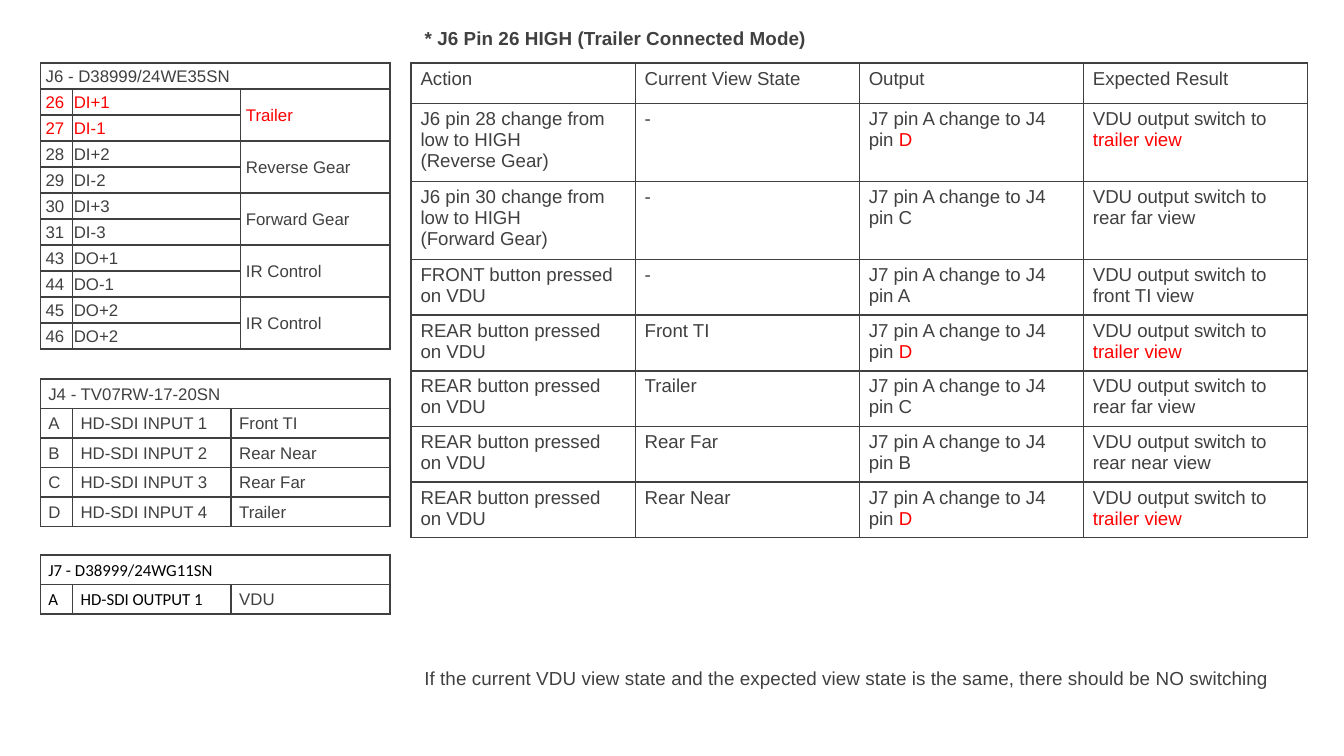
from dataclasses import dataclass

from lxml import etree
from pptx import Presentation
from pptx.dml.color import RGBColor as RGB
from pptx.enum.text import MSO_ANCHOR as Anchor, MSO_AUTO_SIZE as AutoSize, PP_ALIGN as Align
from pptx.oxml.ns import qn
from pptx.util import Inches, Pt

COLORS = {"text": "404040", "accent": "FF0000", "black": "000000", "border": "404040"}
RED = "|"


@dataclass
class Column:
    width: float
    pad: float
    font: str = "Arial"
    color: str = "text"


@dataclass
class Grid:
    left: float
    top: float
    columns: list[Column]
    heights: list[float]
    rows: list[list[str]]
    merges: list[tuple[int, int, int, int]]
    size: float = 9
    spacing: float = 1.07
    pad_y: float = 0
    anchor: Anchor = Anchor.MIDDLE


def write(tf, text: str, *, size: float, font: str = "Arial", color: str = "text",
          bold: bool = False, spacing: float = 1) -> None:
    for i, line in enumerate(text.split("\n")):
        p = tf.add_paragraph() if i else tf.paragraphs[0]
        p.alignment = Align.LEFT
        p.line_spacing = spacing
        p.space_before = Pt(0)
        for j, part in enumerate(line.split(RED)):
            if not part:
                continue
            r = p.add_run()
            r.text = part
            r.font.size = Pt(size)
            r.font.name = font
            r.font.bold = bold
            r.font.color.rgb = RGB.from_string(COLORS["accent" if j % 2 else color])


def add_borders(cell) -> None:
    tc_pr = cell._tc.get_or_add_tcPr()
    for i, side in enumerate(("lnL", "lnR", "lnT", "lnB")):
        ln = etree.Element(qn(f"a:{side}"), w=str(Pt(1)))
        fill = etree.SubElement(ln, qn("a:solidFill"))
        etree.SubElement(fill, qn("a:srgbClr"), val=COLORS["border"])
        tc_pr.insert(i, ln)


def draw_grid(slide, grid: Grid) -> None:
    width = sum(col.width for col in grid.columns)
    table = slide.shapes.add_table(
        len(grid.rows), len(grid.columns), Inches(grid.left), Inches(grid.top),
        Inches(width), Inches(sum(grid.heights))).table
    table.first_row = table.horz_banding = False
    for i, col in enumerate(grid.columns):
        table.columns[i].width = Inches(col.width)
    for i, (height, row) in enumerate(zip(grid.heights, grid.rows)):
        table.rows[i].height = Inches(height)
        for j, (col, text) in enumerate(zip(grid.columns, row)):
            cell = table.cell(i, j)
            cell.margin_left = cell.margin_right = Inches(col.pad)
            cell.margin_top = cell.margin_bottom = Inches(grid.pad_y)
            cell.vertical_anchor = grid.anchor
            cell.fill.background()
            add_borders(cell)
            write(cell.text_frame, text, size=grid.size, font=col.font,
                  color=col.color, spacing=grid.spacing)
    for top, left, bottom, right in grid.merges:
        table.cell(top, left).merge(table.cell(bottom, right))


def place_text(sp, top: float, text: str, bold: bool = False) -> None:
    sp.left, sp.top = Inches(3.06), Inches(top)
    sp.width, sp.height = Inches(6.67), Inches(0.27)
    tf = sp.text_frame
    tf.word_wrap = True
    tf.auto_size = AutoSize.SHAPE_TO_FIT_TEXT
    tf.vertical_anchor = Anchor.TOP
    write(tf, text, size=10.15, bold=bold)


def connector_grids() -> list[Grid]:
    signals = [
        ("Trailer", "DI", 1, 26), ("Reverse Gear", "DI", 2, 28), ("Forward Gear", "DI", 3, 30),
        ("IR Control", "DO", 1, 43), ("IR Control", "DO", 2, 45),
    ]
    j6_rows = [["J6 - D38999/24WE35SN", "", ""]]
    for label, kind, number, pin in signals:
        mark = RED if label == "Trailer" else ""
        second_sign = "+" if (kind, number) == ("DO", 2) else "-"
        j6_rows += [
            [f"{mark}{pin}", f"{mark}{kind}+{number}", f"{mark}{label}"],
            [f"{mark}{pin + 1}", f"{mark}{kind}{second_sign}{number}", ""],
        ]
    header = (0, 0, 0, 2)
    views = ["Front TI", "Rear Near", "Rear Far", "Trailer"]
    j4_rows = [["J4 - TV07RW-17-20SN", "", ""]] + [
        [letter, f"HD-SDI INPUT {n}", view]
        for n, (letter, view) in enumerate(zip("ABCD", views), 1)]
    j7_rows = [["J7 - D38999/24WG11SN", "", ""], ["A", "HD-SDI OUTPUT 1", "VDU"]]
    view_column = Column(1.18, 0.06)
    return [
        Grid(0.3, 0.47, [Column(0.24, 0.04), Column(1.25, 0.01), Column(1.11, 0.04)],
             [2.13 / 11] * 11, j6_rows, [header] + [(i, 2, i + 1, 2) for i in range(1, 11, 2)]),
        Grid(0.3, 2.82, [Column(0.24, 0.06), view_column, view_column],
             [0.22] * 5, j4_rows, [header]),
        Grid(0.3, 4.13, [Column(0.24, 0.06, "Calibri", "black"),
                         Column(1.18, 0.06, "Calibri", "black"), view_column],
             [0.22] * 2, j7_rows, [header]),
    ]


def action_grid() -> Grid:
    pin_change = "J6 pin {} change from low to HIGH\n({} Gear)"
    rear = "REAR button pressed on VDU"
    steps = [
        (pin_change.format(28, "Reverse"), "-", "|D", "|trailer view"),
        (pin_change.format(30, "Forward"), "-", "C", "rear far view"),
        ("FRONT button pressed on VDU", "-", "A", "front TI view"),
        (rear, "Front TI", "|D", "|trailer view"),
        (rear, "Trailer", "C", "rear far view"),
        (rear, "Rear Far", "B", "rear near view"),
        (rear, "Rear Near", "|D", "|trailer view"),
    ]
    rows = [["Action", "Current View State", "Output", "Expected Result"]] + [
        [action, state, f"J7 pin A change to J4 pin {pin}", f"VDU output switch to {view}"]
        for action, state, pin, view in steps]
    return Grid(3.06, 0.47, [Column(6.67 / 4, 0.07)] * 4, [0.3] + [0.58] * 2 + [0.41] * 5,
                rows, [], size=10, spacing=1, pad_y=0.04, anchor=Anchor.TOP)


def main() -> None:
    prs = Presentation()
    prs.slide_width = Inches(10)
    prs.slide_height = prs.slide_width * 9 // 16
    s = prs.slides.add_slide(prs.slide_layouts[5])
    for grid in [*connector_grids(), action_grid()]:
        draw_grid(s, grid)
    note = s.shapes.add_textbox(0, 0, 0, 0)
    place_text(note, 4.91, "If the current VDU view state and the expected view state "
               "is the same, there should be NO switching")
    place_text(s.shapes.title, 0.15, "* J6 Pin 26 HIGH (Trailer Connected Mode)", bold=True)
    prs.save("out.pptx")


if __name__ == "__main__":
    main()
